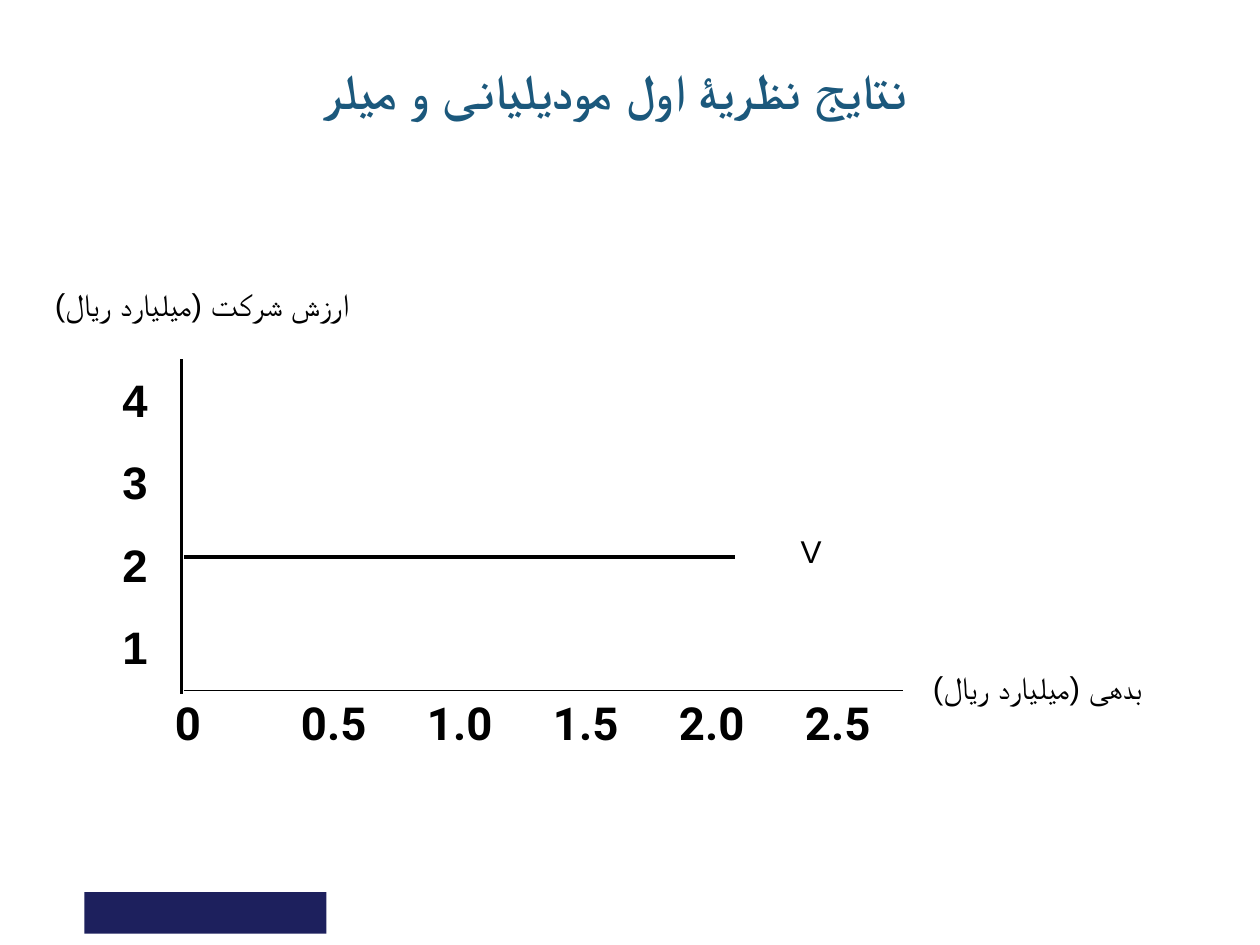
from lxml import etree
from pptx import Presentation, util as u
from pptx.dml.color import RGBColor
from pptx.enum import shapes, text
from pptx.oxml import ns

BLACK = RGBColor(0x00, 0x00, 0x00)
TEAL = RGBColor(0x1B, 0x58, 0x7C)
NAVY = RGBColor(0x1D, 0x20, 0x5D)
LEFT, CENTER, RIGHT = text.PP_ALIGN.LEFT, text.PP_ALIGN.CENTER, text.PP_ALIGN.RIGHT


class SlideWriter:
    """Holds the text style and the current page."""

    def __init__(self, page, label_font="Arial", number_font="Roboto"):
        self.page = page
        self.label_font = label_font
        self.number_font = number_font

    def bar(self, left, top, width, height, color):
        bar = self.page.shapes.add_shape(
            shapes.MSO_SHAPE.RECTANGLE, *map(u.Inches, (left, top, width, height)))
        bar.shadow.inherit = False
        bar.fill.solid()
        bar.fill.fore_color.rgb = color
        bar.line.fill.background()

    def line(self, x1, y1, x2, y2, weight):
        line = self.page.shapes.add_connector(
            shapes.MSO_CONNECTOR.STRAIGHT, *map(u.Inches, (x1, y1, x2, y2)))
        line.line.color.rgb = BLACK
        line.line.width = u.Pt(weight)
        etree.SubElement(line._element.spPr, ns.qn("a:effectLst"))

    def text(self, left, top, width, height, lines, size=18, font=None, color=BLACK,
             bold=False, align=CENTER, rtl=True, gap=0, spacing=None, wrap=True,
             anchor=text.MSO_ANCHOR.TOP, script_font=True, tabs=()):
        box = self.page.shapes.add_textbox(*map(u.Inches, (left, top, width, height)))
        frame = box.text_frame
        frame.word_wrap = wrap
        frame.vertical_anchor = anchor
        for index, line in enumerate(lines):
            para = frame.add_paragraph() if index else frame.paragraphs[0]
            para.alignment = align
            para.line_spacing = spacing
            if index:
                para.space_before = u.Pt(gap)
            props = para._p.get_or_add_pPr()
            if rtl:
                props.set("rtl", "1")
            if tabs:
                stops = etree.SubElement(props, ns.qn("a:tabLst"))
                for stop in tabs:
                    etree.SubElement(stops, ns.qn("a:tab"), pos=str(u.Inches(stop)), algn="l")
            span = para.add_run()
            span.text = line
            span.font.name = font or self.label_font
            span.font.size = u.Pt(size)
            span.font.bold = bold
            span.font.color.rgb = color
            # Right-to-left text takes its typeface from the complex-script font
            if script_font:
                script = etree.SubElement(span.font._element, ns.qn("a:cs"))
                script.set("typeface", self.label_font)

    def numbers(self, left, top, width, height, lines, **options):
        self.text(left, top, width, height, lines, size=26, font=self.number_font,
                  bold=True, **options)


def main():
    deck = Presentation()
    deck.slide_width, deck.slide_height = u.Inches(10), u.Inches(7.5)
    writer = SlideWriter(deck.slides.add_slide(deck.slide_layouts[6]))

    # Footer bar and title
    writer.bar(0.67, 7.08, 1.92, 0.33, NAVY)
    writer.text(0.33, 0.17, 9, 1.08, ["نتایج نظریۀ اول مودیلیانی و میلر "], size=28,
                color=TEAL, bold=True, anchor=text.MSO_ANCHOR.MIDDLE, script_font=False)

    # Value axis
    writer.line(1.44, 2.85, 1.44, 5.51, 2)
    writer.text(-0.17, 2.25, 3.55, 0.38, ["ارزش شرکت (میلیارد ریال)"], spacing=0.9)
    writer.numbers(0.5, 2.9, 0.77, 2.61, ["4", "3", "2", "1"], align=RIGHT, gap=16)

    # Debt axis
    writer.numbers(1.29, 5.47, 7.99, 0.53, ["0\t0.5\t1.0\t1.5\t2.0\t2.5"],
                   align=LEFT, rtl=False, tabs=range(1, 6))
    writer.text(6.83, 5.29, 2.81, 0.38, ["بدهی (میلیارد ریال)"], spacing=0.9)
    writer.line(1.46, 5.48, 7.17, 5.48, 1)

    # Constant company value
    writer.line(1.46, 4.42, 5.83, 4.42, 2)
    writer.text(6.25, 4.17, 0.37, 0.4, ["V"], align=RIGHT, wrap=False)

    deck.save("out.pptx")


if __name__ == "__main__":
    main()
